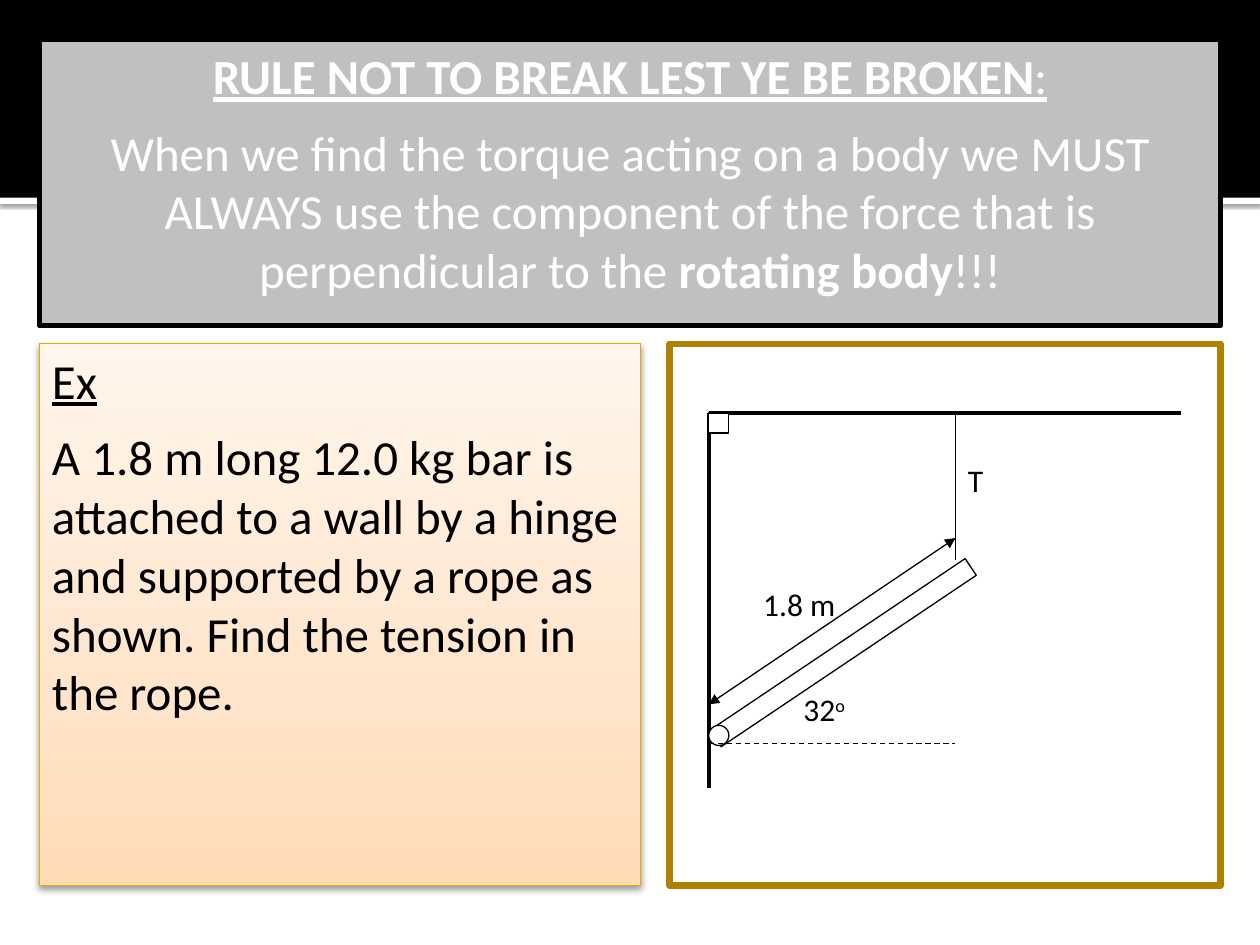
from lxml import etree
from pptx import Presentation
from pptx.dml.color import RGBColor
from pptx.enum import dml, shapes, text
from pptx.oxml import parse_xml
from pptx.oxml.ns import nsdecls, qn
from pptx.util import Pt

FONT = "Calibri"
RULE = [
    [("RULE NOT TO BREAK LEST YE BE BROKEN", "bu"), (":", "u")],
    [("When we find the torque acting on a body we MUST ALWAYS use the component "
      "of the force that is perpendicular to the ", ""),
     ("rotating body", "b"), ("!!!", "")],
]
TASK = [
    [("Ex", "u")],
    [("A 1.8 m long 12.0 kg bar is attached to a wall by a hinge and supported "
      "by a rope as shown. Find the tension in the rope.", "")],
]
WARM = [(0, "FFDBB5"), (35, "FFE5CB"), (100, "FFF5EB")]

EDGE, WIDE, TOP, HIGH = 22.5, 675, 196.5, 309.5
WALL, ROOF, ROPE, PIN = 405, 236, 546, 11.5
LABELS = [
    ([("32", ""), ("o", "^")], (452, 391, 47, 47)),
    ([("T", "")], (ROPE, 260, 47, 47)),
    ([("1.8 m", "")], (429, 331, 70.5, 24)),
]
THIN = [
    ((ROPE, ROOF, ROPE, 320), False, False),
    ((WALL, 425, ROPE, 425), True, False),
    ((WALL, 402.5, ROPE, 307.5), False, True),
]


def hue(code):
    return RGBColor.from_string(code)


def place(box, spot):
    box.left, box.top, box.width, box.height = map(Pt, spot)


def paint(box, fill=None, line=None, width=0.75):
    if fill:
        box.fill.solid()
        box.fill.fore_color.rgb = hue(fill)
    if line:
        box.line.color.rgb = hue(line)
        box.line.width = Pt(width)
    else:
        box.line.fill.background()


def block(spot, kind=shapes.MSO_SHAPE.RECTANGLE, **look):
    box = items.add_shape(kind, *map(Pt, spot))
    box.shadow.inherit = False
    paint(box, **look)
    return box


def shade(box, alpha, blur, dist):
    props = box.element.spPr
    for old in props.findall(qn("a:effectLst")):
        props.remove(old)
    props.append(parse_xml(
        f'<a:effectLst {nsdecls("a")}><a:outerShdw blurRad="{Pt(blur)}" '
        f'dist="{Pt(dist)}" dir="5400000" rotWithShape="0"><a:srgbClr val="000000">'
        f'<a:alpha val="{alpha * 1000}"/></a:srgbClr></a:outerShdw></a:effectLst>'))


def blend(box, stops):
    box.fill.gradient()
    box.fill.gradient_angle = 90
    group = box.element.spPr.find(".//" + qn("a:gsLst"))
    for old in list(group):
        group.remove(old)
    for spot, code in stops:
        stop = etree.SubElement(group, qn("a:gs"), pos=str(spot * 1000))
        etree.SubElement(stop, qn("a:srgbClr"), val=code)


def stroke(ends, width=0.75, dash=False, heads=False):
    link = items.add_connector(shapes.MSO_CONNECTOR.STRAIGHT, *map(Pt, ends))
    link.line.color.rgb = hue("000000")
    link.line.width = Pt(width)
    if dash:
        link.line.dash_style = dml.MSO_LINE.DASH
    if heads:
        for end in ("headEnd", "tailEnd"):
            etree.SubElement(link.line._get_or_add_ln(), qn("a:" + end), type="triangle")
    etree.SubElement(link.element.spPr, qn("a:effectLst"))


def write(box, paras, size=28, color="000000", align=text.PP_ALIGN.LEFT):
    frame = box.text_frame
    frame.word_wrap = True
    frame.auto_size = text.MSO_AUTO_SIZE.NONE
    frame.vertical_anchor = text.MSO_ANCHOR.TOP
    for at, runs in enumerate(paras):
        para = frame.add_paragraph() if at else frame.paragraphs[0]
        para.alignment = align
        para.space_before, para.space_after = Pt(0), Pt(10)
        props = para._p.get_or_add_pPr()
        props.set("marL", "0")
        props.set("indent", "0")
        etree.SubElement(props, qn("a:buNone"))
        for words, marks in runs:
            run = para.add_run()
            run.text = words
            font = run.font
            font.name, font.size, font.color.rgb = FONT, Pt(size), hue(color)
            font.bold, font.underline = "b" in marks, "u" in marks
            if "^" in marks:
                run._r.get_or_add_rPr().set("baseline", "30000")


deck = Presentation()
deck.slide_width, deck.slide_height = Pt(720), Pt(540)
slide = deck.slides.add_slide(deck.slide_layouts[1])
items = slide.shapes
title, body = items.title, slide.placeholders[1]

shade(block((0, 113, 720, 3.5), fill="FFFFFF"), 60, 2.5, 0.8)
block((0, 0, 720, 113), fill="000000")
block((382.5, TOP, 315, HIGH), fill="FFFFFF", line="B28000", width=3.78)

for box in (title, body):
    items._spTree.append(box.element)
place(title, (EDGE, EDGE, WIDE, 163.5))
paint(title, fill="C0C0C0", line="000000", width=3)
write(title, RULE, color="FFFFFF", align=text.PP_ALIGN.CENTER)

place(body, (EDGE, TOP, 343.5, HIGH))
blend(body, WARM)
paint(body, line="EBA900", width=0.5)
shade(body, 38, 3.5, 2)
write(body, TASK)

stroke((WALL, ROOF, WALL, 450), width=2.5)
stroke((WALL, ROOF, 675, ROOF), width=2.5)
bar = block((394, 367.2, 175.7, PIN), fill="FFFFFF", line="000000")
bar.rotation = 326.1
block((WALL, 414.5, PIN, PIN), shapes.MSO_SHAPE.OVAL, fill="FFFFFF", line="000000")
for ends, dash, heads in THIN:
    stroke(ends, dash=dash, heads=heads)
for runs, spot in LABELS:
    write(items.add_textbox(*map(Pt, spot)), [runs], size=18)
block((WALL, ROOF, PIN, PIN), fill="FFFFFF", line="000000")

deck.save("out.pptx")
